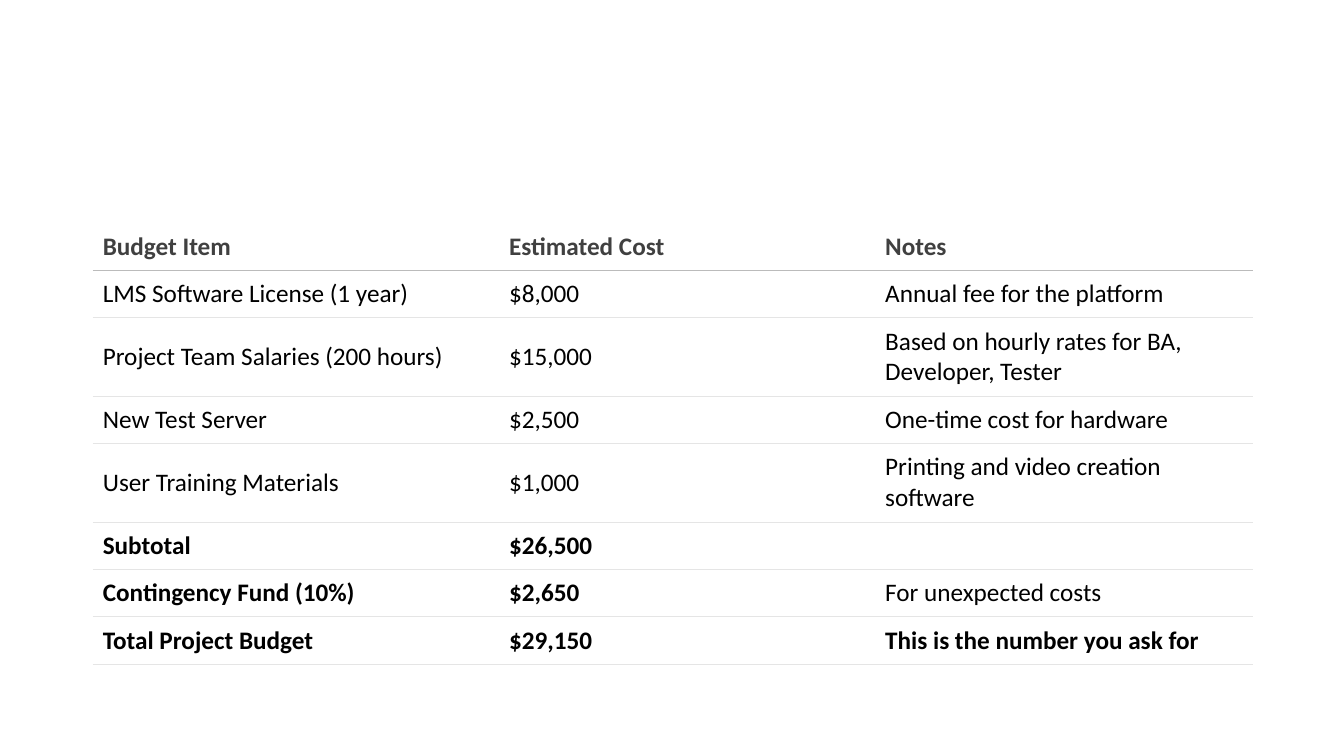
"""Builds the project budget slide: one ruled table of items, costs and notes."""
from lxml import etree
from pptx import Presentation
from pptx import util as u
from pptx.dml.color import RGBColor
from pptx.enum import text
from pptx.oxml import ns

COLORS = {"paper": "FFFFFF", "heading": "404040", "ink": "000000",
          "header_rule": "BBBBBB", "rule": "E5E5E5"}
COLUMN_WIDTHS = [4.05, 3.73, 3.73]
ONE_LINE, TWO_LINES = 0.47, 0.78
BUDGET = [
    ("Budget Item", "Estimated Cost", "Notes"),
    ("LMS Software License (1 year)", "$8,000", "Annual fee for the platform"),
    ("Project Team Salaries (200 hours)", "$15,000", "Based on hourly rates for BA, Developer, Tester"),
    ("New Test Server", "$2,500", "One-time cost for hardware"),
    ("User Training Materials", "$1,000", "Printing and video creation software"),
    ("Subtotal", "$26,500", ""),
    ("Contingency Fund (10%)", "$2,650", "For unexpected costs"),
    ("Total Project Budget", "$29,150", "This is the number you ask for"),
]
WRAPPED_ROWS = {2, 4}
BOLD_ROWS = {0, 5, 6, 7}
PLAIN_CELLS = {(6, 2)}


def add_border(cell, side, color=None):
    line = etree.SubElement(cell._tc.get_or_add_tcPr(), ns.qn(f"a:ln{side}"), w=str(u.Pt(0.48)))
    if color:
        fill = etree.SubElement(line, ns.qn("a:solidFill"))
        etree.SubElement(fill, ns.qn("a:srgbClr"), val=COLORS[color])
    else:
        etree.SubElement(line, ns.qn("a:noFill"))


deck = Presentation()
deck.slide_width, deck.slide_height = u.Inches(13.33), u.Inches(7.5)
slide = deck.slides.add_slide(deck.slide_layouts[6])

row_heights = [TWO_LINES if row in WRAPPED_ROWS else ONE_LINE for row in range(len(BUDGET))]
budget = slide.shapes.add_table(
    len(BUDGET), len(COLUMN_WIDTHS), u.Inches(0.92), u.Inches(2.21),
    u.Inches(sum(COLUMN_WIDTHS)), u.Inches(sum(row_heights))).table
budget.first_row = budget.horz_banding = False
for column, width in zip(budget.columns, COLUMN_WIDTHS):
    column.width = u.Inches(width)

for row, entries in enumerate(BUDGET):
    budget.rows[row].height = u.Inches(row_heights[row])
    rule_above = None if row == 0 else "header_rule" if row == 1 else "rule"
    rule_below = "header_rule" if row == 0 else "rule"
    for column, entry in enumerate(entries):
        cell = budget.cell(row, column)
        layout = {"margin_left": u.Inches(0.08 if column else 0.1),
                  "margin_right": u.Inches(0.08), "margin_top": u.Inches(0.08),
                  "margin_bottom": u.Inches(0.08),
                  "vertical_anchor": text.MSO_ANCHOR.MIDDLE}
        for name, value in layout.items():
            setattr(cell, name, value)
        for side, color in zip("LRTB", (None, None, rule_above, rule_below)):
            add_border(cell, side, color)
        cell.fill.solid()
        cell.fill.fore_color.rgb = RGBColor.from_string(COLORS["paper"])

        cell.text = entry
        font = cell.text_frame.paragraphs[0].font
        if entry:
            font = cell.text_frame.paragraphs[0].runs[0].font
        style = {"name": "Calibri", "size": u.Pt(18),
                 "bold": row in BOLD_ROWS and (row, column) not in PLAIN_CELLS}
        for name, value in style.items():
            setattr(font, name, value)
        font.color.rgb = RGBColor.from_string(COLORS["ink" if row else "heading"])

deck.save("out.pptx")
